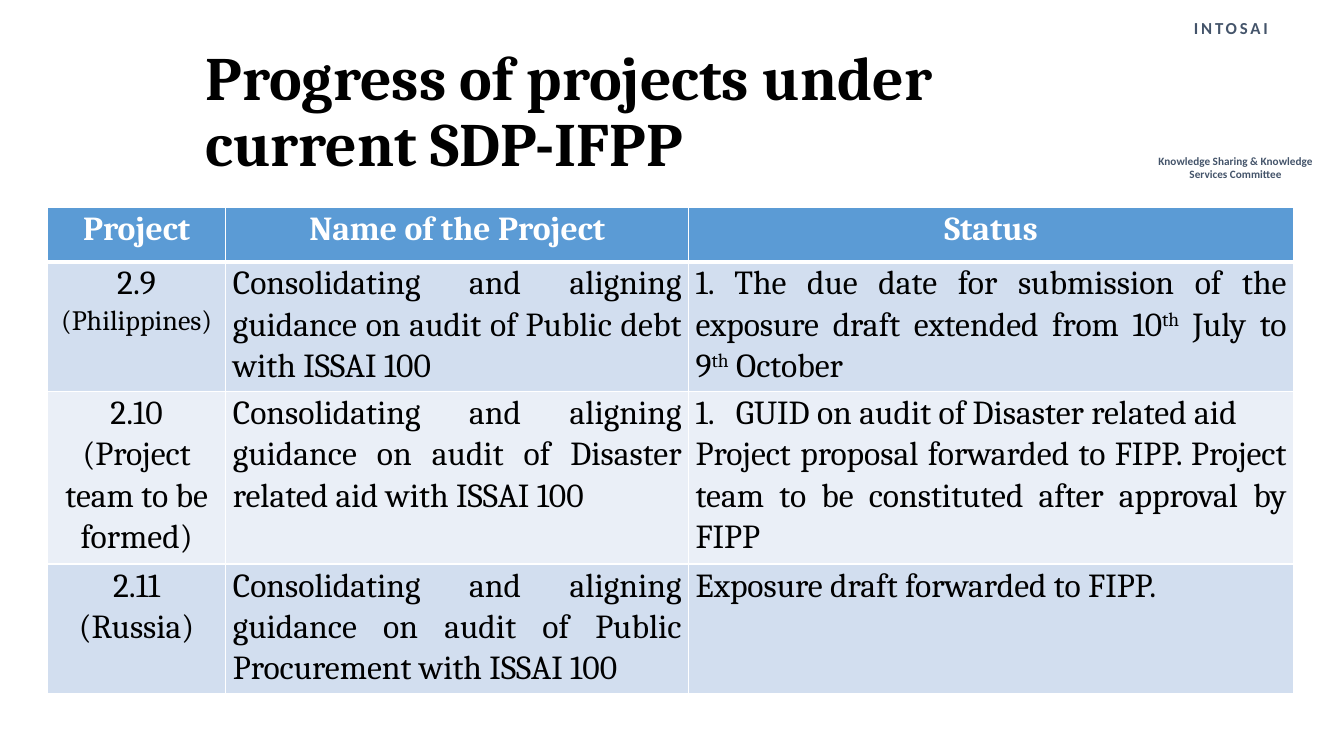
"""Builds the slide on the progress of projects under the current SDP-IFPP."""
from dataclasses import dataclass

from lxml.etree import SubElement
from pptx import Presentation
from pptx.dml.color import RGBColor as Rgb
from pptx.enum.text import MSO_ANCHOR as Anchor, PP_ALIGN as Align
from pptx.oxml.ns import qn
from pptx.util import Inches, Pt

INK = {"head": "5B9BD5", "odd": "D2DEEF", "even": "EAEFF7",
       "white": "FFFFFF", "black": "000000", "slate": "44546A"}


@dataclass
class Para:
    text: str
    size: int = 24
    font: str = "Cambria"
    ink: str = "black"
    bold: bool = False
    align: Align = Align.JUSTIFY
    lead: float = 1.07
    track: int = 0
    count: bool = False


@dataclass
class Box:
    left: float
    top: float
    width: float
    height: float
    para: Para
    anchor: Anchor = Anchor.TOP


def mid(text: str, size: int = 24) -> Para:
    return Para(text, size, align=Align.CENTER)


def head(text: str) -> Para:
    return Para(text, ink="white", bold=True, align=Align.CENTER)


def note(text: str, size: int, track: int = 0) -> Para:
    return Para(text, size, "Calibri", "slate", True, Align.CENTER, 1.0, track)


BOXES = [
    Box(11.41, 0.13, 1.6, 0.3, note("INTOSAI", 12, 200)),
    Box(11.22, 1.48, 2.07, 0.37,
        note("Knowledge Sharing & Knowledge Services Committee", 8)),
    Box(1.94, 0.4, 9.06, 1.45,
        Para("Progress of projects under current SDP-IFPP", 44, bold=True,
             align=Align.LEFT, lead=0.9), Anchor.MIDDLE),
]

AIM = "Consolidating and aligning guidance on audit of {} with ISSAI 100"
COLS = [1.77, 4.59, 6]
TALL = [0.54, 1.22, 1.64, 1.22]
ROWS = [
    [[head("Project")], [head("Name of the Project")], [head("Status")]],
    [[mid("2.9"), mid("(Philippines)", 20)],
     [Para(AIM.format("Public debt"))],
     [Para("1. The due date for submission of the exposure draft extended "
           "from 10^th^ July to 9^th^ October")]],
    [[mid("2.10"), mid("(Project team to be formed)")],
     [Para(AIM.format("Disaster related aid"))],
     [Para("GUID on audit of Disaster related aid", count=True),
      Para("Project proposal forwarded to FIPP. Project team to be "
           "constituted after approval by FIPP")]],
    [[mid("2.11"), mid("(Russia)")],
     [Para(AIM.format("Public Procurement"))],
     [Para("Exposure draft forwarded to FIPP.")]],
]


def write(frame, paras: list[Para]) -> None:
    for i, para in enumerate(paras):
        line = frame.add_paragraph() if i else frame.paragraphs[0]
        line.alignment, line.line_spacing = para.align, para.lead
        if para.count:
            props = line._p.get_or_add_pPr()
            props.set("marL", str(Inches(0.4)))
            props.set("indent", str(Inches(-0.4)))
            SubElement(props, qn("a:buFont"), typeface="+mj-lt")
            SubElement(props, qn("a:buAutoNum"), type="arabicPeriod")
        font = line.font
        font.name, font.size, font.bold = para.font, Pt(para.size), para.bold
        font.color.rgb = Rgb.from_string(INK[para.ink])
        for j, part in enumerate(para.text.split("^")):
            run = line.add_run()
            run.text = part
            if j % 2:
                run._r.get_or_add_rPr().set("baseline", "30000")
            if para.track:
                run._r.get_or_add_rPr().set("spc", str(para.track))


def edge(cell, side: str, width: float) -> None:
    rule = SubElement(cell._tc.get_or_add_tcPr(), qn("a:ln" + side),
                      w=str(Pt(width)))
    fill = SubElement(rule, qn("a:solidFill"))
    SubElement(fill, qn("a:srgbClr"), val=INK["white"])


def add_box(slide, box: Box) -> None:
    shape = slide.shapes.add_textbox(
        *map(Inches, (box.left, box.top, box.width, box.height)))
    frame = shape.text_frame
    frame.word_wrap = True
    frame.vertical_anchor = box.anchor
    write(frame, [box.para])


def add_grid(slide) -> None:
    grid = slide.shapes.add_table(
        len(ROWS), len(COLS), Inches(0.47), Inches(2.06),
        Inches(sum(COLS)), Inches(sum(TALL))).table
    for col, width in zip(grid.columns, COLS):
        col.width = Inches(width)
    for r, row in enumerate(ROWS):
        grid.rows[r].height = Inches(TALL[r])
        tone = "head" if r == 0 else "odd" if r % 2 else "even"
        for c, paras in enumerate(row):
            cell = grid.cell(r, c)
            cell.margin_left = cell.margin_right = Inches(0.07)
            cell.margin_top = cell.margin_bottom = 0
            for side in "LRTB":
                thick = (r, side) in ((0, "B"), (1, "T"))
                edge(cell, side, 3 if thick else 1)
            cell.fill.solid()
            cell.fill.fore_color.rgb = Rgb.from_string(INK[tone])
            write(cell.text_frame, paras)


def main() -> None:
    deck = Presentation()
    deck.slide_width, deck.slide_height = Inches(13.33), Inches(7.5)
    slide = deck.slides.add_slide(deck.slide_layouts[6])
    for box in BOXES:
        add_box(slide, box)
    add_grid(slide)
    deck.save("out.pptx")


if __name__ == "__main__":
    main()
